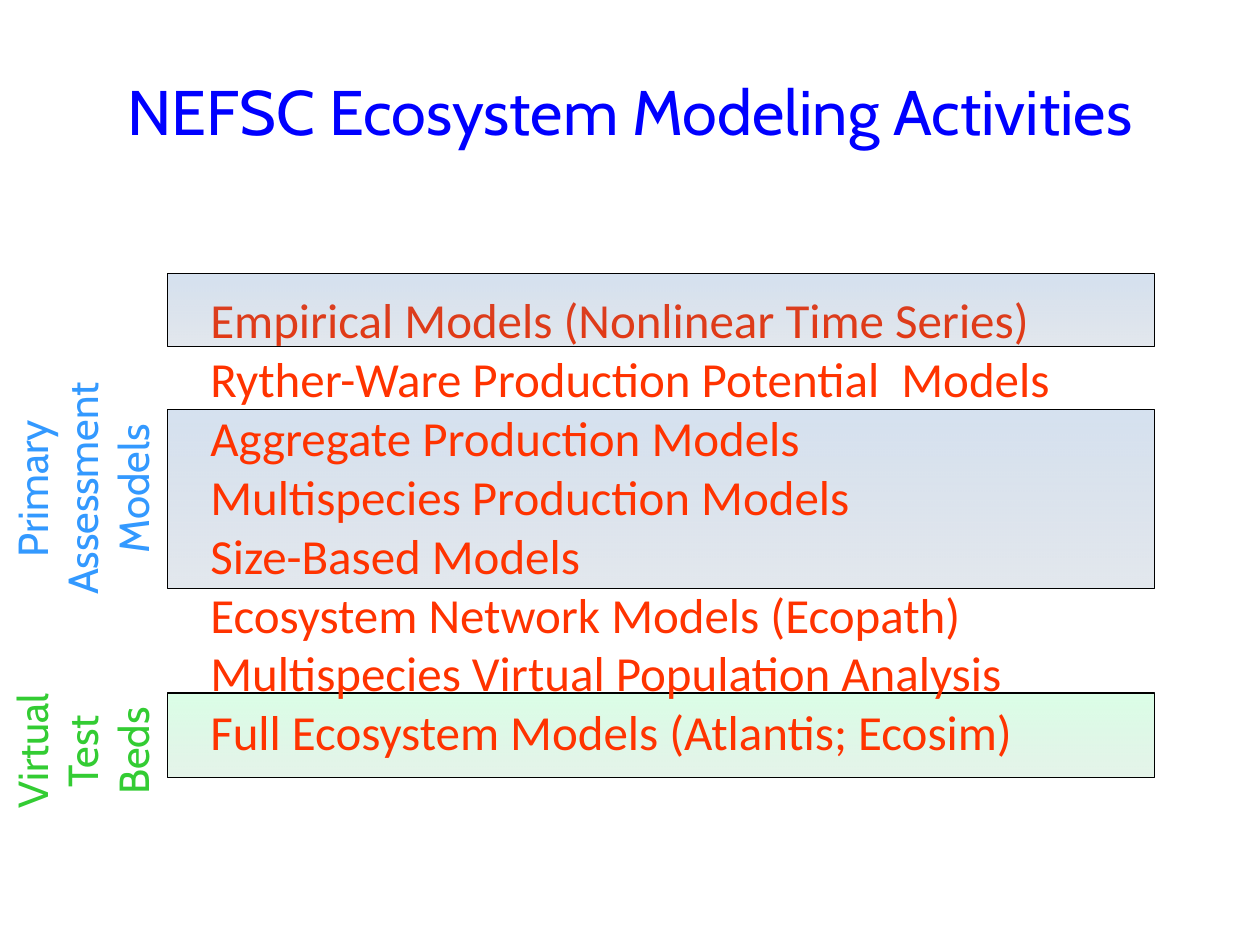
from lxml.etree import SubElement
from pptx import Presentation
from pptx.dml.color import RGBColor
from pptx.enum.shapes import MSO_SHAPE
from pptx.enum.text import MSO_ANCHOR, MSO_AUTO_SIZE, PP_ALIGN
from pptx.oxml.ns import qn
from pptx.util import Cm, Pt

COLORS = {
    "title": "0000FF", "models": "FF3300", "line": "000000",
    "assessment": "3399FF", "test_beds": "33CC33",
    "blue_top": "4F81BD", "blue_bottom": "395C87",
    "green_top": "66FF99", "green_bottom": "49B66D",
}
BAND_LEFT, BAND_WIDTH = 3.38, 19.89
MODELS = [
    "Empirical Models (Nonlinear Time Series)",
    "Ryther-Ware Production Potential  Models",
    "Aggregate Production Models",
    "Multispecies Production Models",
    "Size-Based Models",
    "Ecosystem Network Models (Ecopath)",
    "Multispecies Virtual Population Analysis",
    "Full Ecosystem Models (Atlantis; Ecosim)",
]


def rgb(name):
    """Return the named colour."""
    return RGBColor.from_string(COLORS[name])


def format_text(frame, font_name, size, color, align):
    """Format every paragraph and run of a text frame."""
    frame.word_wrap = True
    for paragraph in frame.paragraphs:
        paragraph.alignment = align
        for run in paragraph.runs:
            run.font.name = font_name
            run.font.size = Pt(size)
            run.font.color.rgb = rgb(color)


def add_title(slide, box, text):
    """Place the slide title in the box."""
    title = slide.shapes.title
    title.left, title.top, title.width, title.height = map(Cm, box)
    title.text_frame.text = text
    title.text_frame.vertical_anchor = MSO_ANCHOR.MIDDLE
    format_text(title.text_frame, "Cabin", 36, "title", PP_ALIGN.CENTER)


def add_band(slide, top, height, hue):
    """Add a translucent gradient band behind or over a group of models."""
    band = slide.shapes.add_shape(
        MSO_SHAPE.RECTANGLE, *map(Cm, (BAND_LEFT, top, BAND_WIDTH, height)))
    band.shadow.inherit = False
    band.fill.gradient()
    band.fill.gradient_angle = 270
    shades = (("top", 0, 24), ("bottom", 1, 14))
    for stop, (end, position, _) in zip(band.fill.gradient_stops, shades):
        stop.color.rgb = rgb(f"{hue}_{end}")
        stop.position = position
    tints = band._element.spPr.iter(qn("a:srgbClr"))
    for tint, (_, _, opacity) in zip(tints, shades):
        SubElement(tint, qn("a:alpha"), val=str(opacity * 1000))
    band.line.color.rgb = rgb("line")
    band.line.width = Pt(0.75)


def add_text(slide, box, text, font_name, size, color, align, rotation=0):
    """Add a text box that grows with its text."""
    label = slide.shapes.add_textbox(*map(Cm, box))
    label.rotation = rotation
    label.text_frame.text = text
    label.text_frame.auto_size = MSO_AUTO_SIZE.SHAPE_TO_FIT_TEXT
    format_text(label.text_frame, font_name, size, color, align)


def add_side_label(slide, box, text, color):
    """Add a label that reads upwards beside a band."""
    add_text(slide, box, text, "Cabin", 24, color, PP_ALIGN.CENTER, 270)


def main():
    """Build and save the slide."""
    deck = Presentation()
    deck.slide_width, deck.slide_height = Cm(25.4), Cm(19.05)
    slide = deck.slides.add_slide(deck.slide_layouts[5])
    add_band(slide, 8.26, 3.61, "blue")
    add_band(slide, 13.97, 1.7, "green")
    add_side_label(slide, (-1.42, 8.2, 6.15, 3.3),
                   "Primary Assessment Models", "assessment")
    add_side_label(slide, (-0.15, 13.49, 3.61, 3.3),
                   "Virtual Test Beds", "test_beds")
    add_title(slide, (1.27, 1.27, 22.86, 1.9),
              "NEFSC Ecosystem Modeling Activities")
    add_text(slide, (3.99, 5.72, 18.24, 15.82), "\n".join(MODELS),
             "Calibri", 28, "models", PP_ALIGN.LEFT)
    add_band(slide, 5.51, 1.47, "blue")
    deck.save("out.pptx")


if __name__ == "__main__":
    main()
